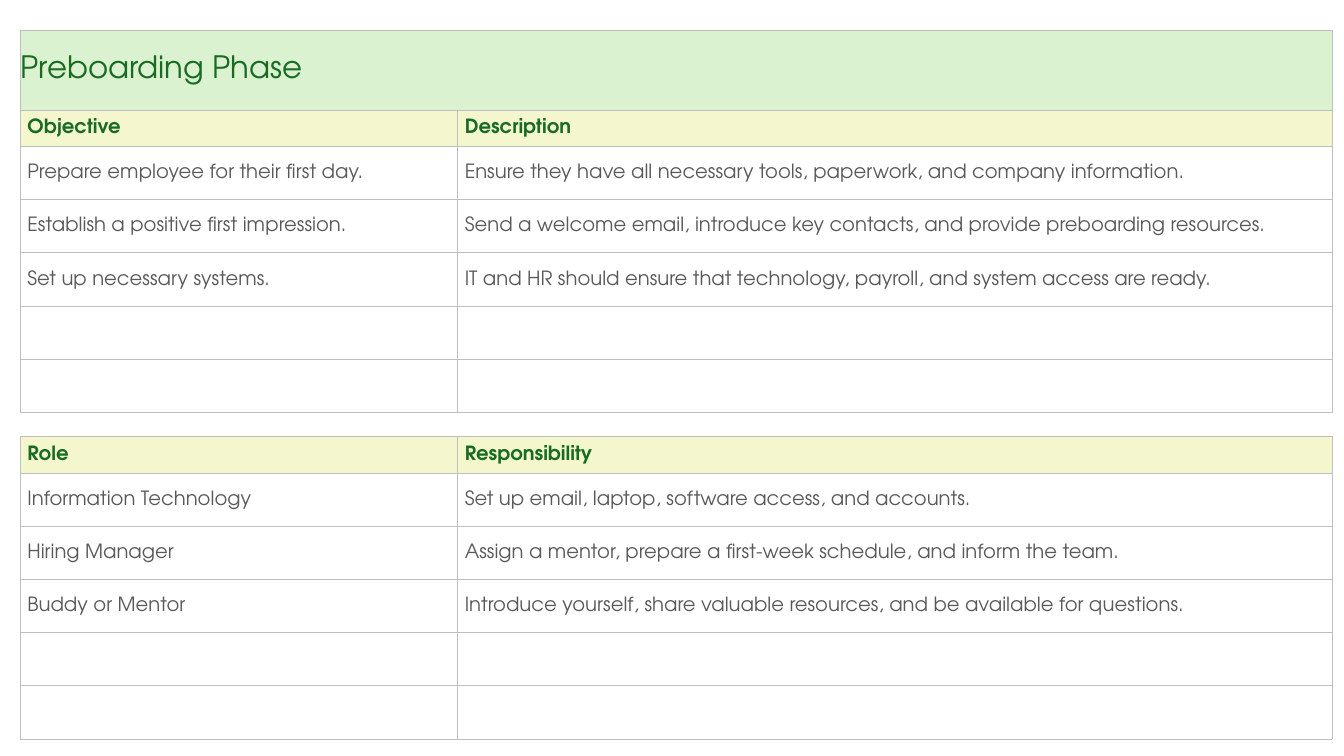
import lxml.etree
import pptx
import pptx.dml.color
import pptx.enum.text
import pptx.oxml.ns
import pptx.util

Cm = pptx.util.Cm
Pt = pptx.util.Pt
FONT = "TeX Gyre Adventor"
GREEN, GRAY, EDGE = "196B24", "595959", "BFBFBF"
MINT, CREAM = "DAF2D0", "F4F7CD"
HEIGHTS = {"title": 2.01, "head": 0.92, "body": 1.34, "gap": 0.61}
ROWS = [
    ("title", "Preboarding Phase", ""),
    ("head", "Objective", "Description"),
    ("body", "Prepare employee for their first day.",
     "Ensure they have all necessary tools, paperwork, and company information."),
    ("body", "Establish a positive first impression.",
     "Send a welcome email, introduce key contacts, and provide preboarding resources."),
    ("body", "Set up necessary systems.",
     "IT and HR should ensure that technology, payroll, and system access are ready."),
    ("body", "", ""),
    ("body", "", ""),
    ("gap", "", ""),
    ("head", "Role", "Responsibility"),
    ("body", "Information Technology",
     "Set up email, laptop, software access, and accounts."),
    ("body", "Hiring Manager",
     "Assign a mentor, prepare a first-week schedule, and inform the team."),
    ("body", "Buddy or Mentor",
     "Introduce yourself, share valuable resources, and be available for questions."),
    ("body", "", ""),
    ("body", "", ""),
]


def color(code):
    return pptx.dml.color.RGBColor.from_string(code)


def border(cell, sides):
    props = cell._tc.get_or_add_tcPr()
    qn = pptx.oxml.ns.qn
    for side in "LRTB":
        line = lxml.etree.SubElement(props, qn(f"a:ln{side}"), w=str(Pt(0.5)))
        if side in sides:
            fill = lxml.etree.SubElement(line, qn("a:solidFill"))
            lxml.etree.SubElement(fill, qn("a:srgbClr"), val=EDGE)
        else:
            lxml.etree.SubElement(line, qn("a:noFill"))


def style(cell, kind):
    border(cell, "TB" if kind == "gap" else "LRTB")
    shade = {"title": MINT, "head": CREAM}.get(kind)
    if shade:
        cell.fill.solid()
        cell.fill.fore_color.rgb = color(shade)
    else:
        cell.fill.background()
    cell.vertical_anchor = pptx.enum.text.MSO_ANCHOR.MIDDLE
    cell.margin_left = Cm(0.02 if kind == "title" else 0.19)
    cell.margin_right = cell.margin_top = Cm(0.02)
    cell.margin_bottom = 0


def write(cell, kind, text):
    para = cell.text_frame.paragraphs[0]
    if not text:
        para._p.get_or_add_endParaRPr().set("sz", "800")
        return
    para.text = text
    font = para.font
    font.name = FONT
    font.size = Pt(22 if kind == "title" else 14)
    font.bold = kind == "head"
    font.color.rgb = color(GRAY if kind == "body" else GREEN)


def plan(slide, left, top, width):
    height = sum(HEIGHTS[row[0]] for row in ROWS)
    frame = slide.shapes.add_table(
        len(ROWS), 3, Cm(left), Cm(top), Cm(width), Cm(height))
    table = frame.table
    table.first_row = table.horz_banding = False
    for col in table.columns:
        col.width = Cm(width / 3)
    for i, (kind, *texts) in enumerate(ROWS):
        table.rows[i].height = Cm(HEIGHTS[kind])
        cells = [table.cell(i, j) for j in range(3)]
        for cell, text in zip(cells, texts + [""]):
            style(cell, kind)
            write(cell, kind, text)
        if kind != "gap":
            cells[0 if kind == "title" else 1].merge(cells[2])


def main():
    deck = pptx.Presentation()
    deck.slide_width, deck.slide_height = Cm(33.87), Cm(19.05)
    slide = deck.slides.add_slide(deck.slide_layouts[6])
    plan(slide, 0.5, 0.76, 33.07)
    deck.save("out.pptx")


if __name__ == "__main__":
    main()
